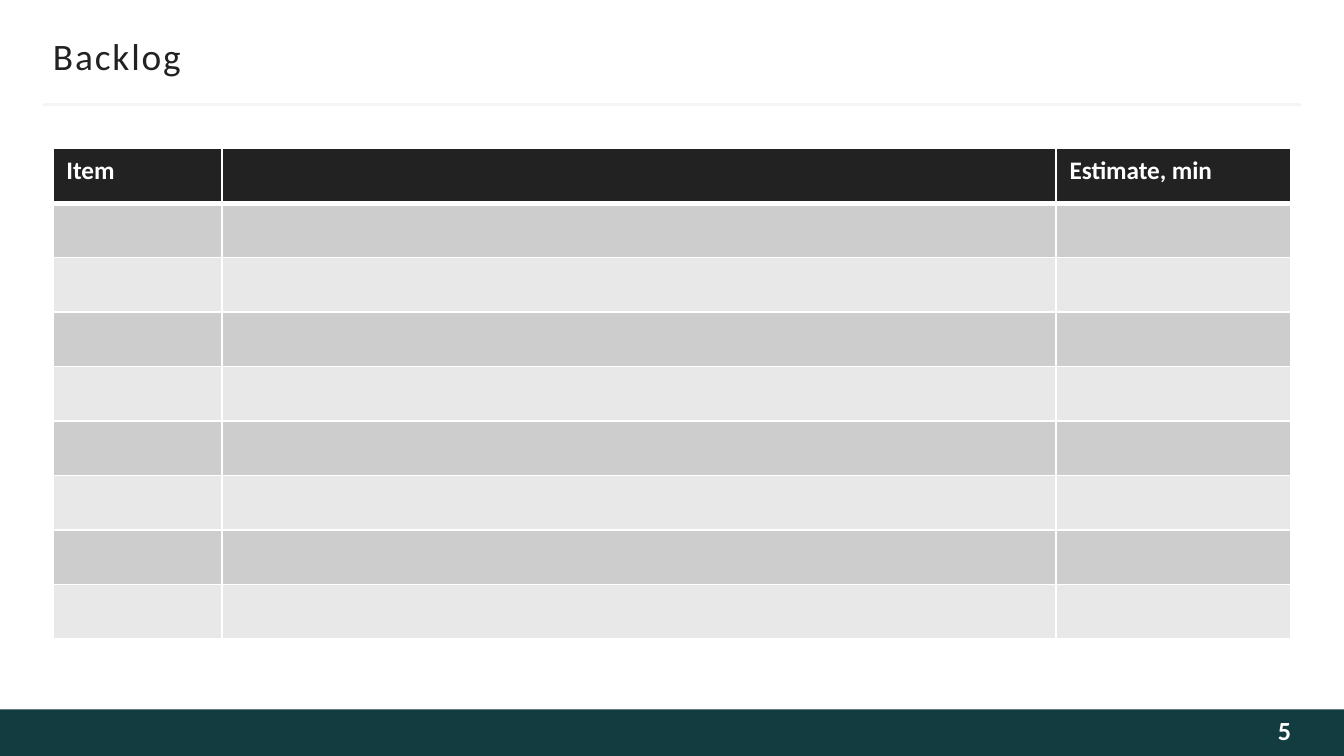
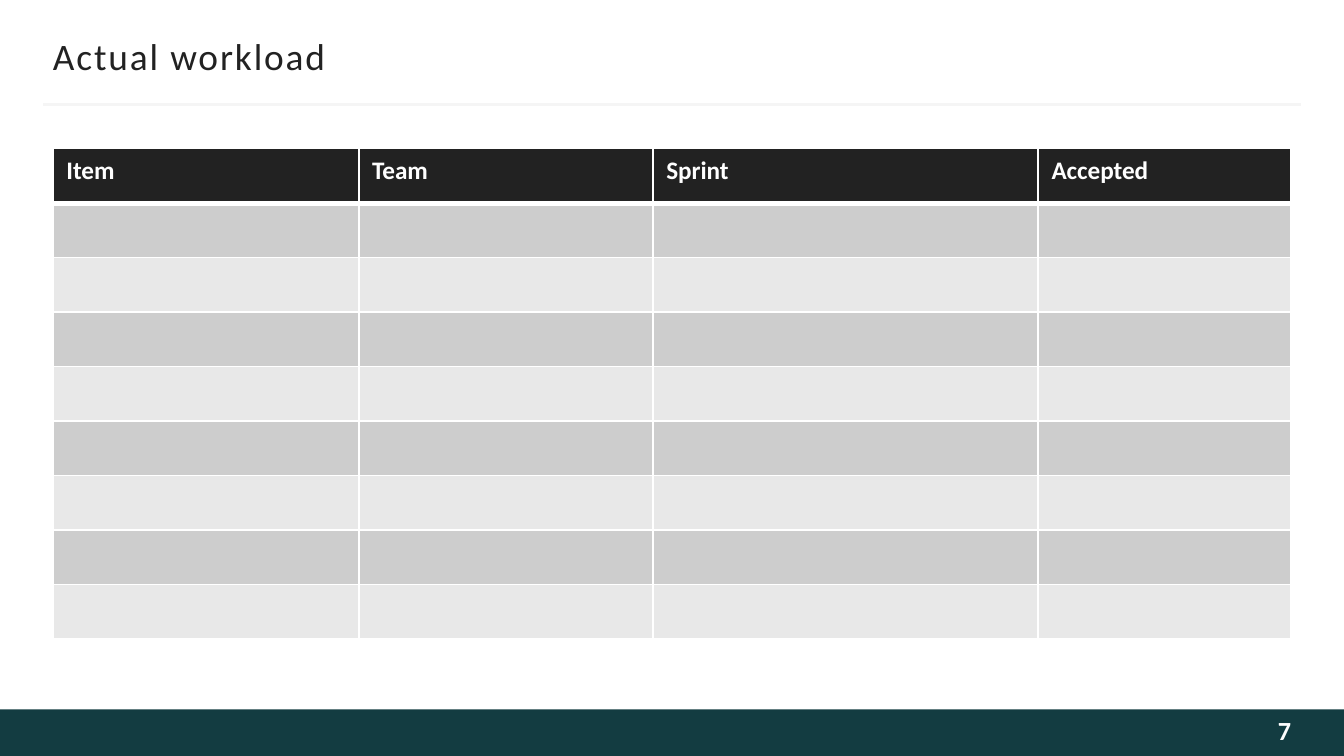
from dataclasses import dataclass
from typing import Any

from lxml.etree import SubElement
from pptx import Presentation
from pptx.dml.color import RGBColor as Color
from pptx.enum.shapes import MSO_CONNECTOR as Connector, MSO_SHAPE as Preset
from pptx.enum.text import MSO_ANCHOR as Anchor, PP_ALIGN as Align
from pptx.oxml.ns import qn
from pptx.util import Cm, Pt


@dataclass(frozen=True)
class Theme:
    font: str = "Calibri"
    background: str = "FFFFFF"
    band: str = "133C41"
    rule: str = "F5F5F5"
    dark: str = "222222"
    header_text: str = "FFFFFF"
    number_text: str = "FEFEFE"
    border: str = "FFFFFF"
    rows: tuple[str, str] = ("CDCDCD", "E8E8E8")
    title_size: float = 20
    header_size: float = 13.5
    number_size: float = 14
    rule_width: float = 1.5
    thin_border: float = 1
    header_border: float = 3


@dataclass(frozen=True)
class Column:
    heading: str
    width: float


@dataclass(frozen=True)
class TableSlide:
    title: str
    number: int
    columns: tuple[Column, ...]


THEME = Theme()
SLIDE_WIDTH, SLIDE_HEIGHT = 25.4, 14.29
MARGIN = 1.0
CONTENT_WIDTH = SLIDE_WIDTH - 2 * MARGIN
BAND_HEIGHT = 0.88
BAND_TOP = SLIDE_HEIGHT - BAND_HEIGHT
RULE_MARGIN, RULE_TOP = 0.82, 1.98
TABLE_TOP, ROW_HEIGHT, BODY_ROWS = 2.81, 1.03, 8
NUMBER_WIDTH = 3.8

SLIDES = (
    TableSlide("Backlog", 5, (
        Column("Item", 3.2), Column("", 15.76), Column("Estimate, min", 4.44))),
    TableSlide("Actual workload", 7, (
        Column("Item", 5.78), Column("Team", 5.56),
        Column("Sprint", 7.28), Column("Accepted", 4.78))),
)


def apply(target: Any, values: dict[str, Any]) -> None:
    for name, value in values.items():
        setattr(target, name, value)


def write(frame: Any, text: str, size: float, color: str, bold: bool,
          align: Any = Align.LEFT) -> Any:
    """Put one formatted run in the frame and return it."""
    paragraph = frame.paragraphs[0]
    paragraph.alignment = align
    run = paragraph.add_run()
    run.text = text
    apply(run.font, {"name": THEME.font, "size": Pt(size), "bold": bold})
    run.font.color.rgb = Color.from_string(color)
    return run


def paint(fill: Any, color: str) -> None:
    fill.solid()
    fill.fore_color.rgb = Color.from_string(color)


def add_title(slide: Any, text: str) -> None:
    title = slide.shapes.title
    apply(title, {"left": Cm(MARGIN), "top": Cm(0.64),
                  "width": Cm(CONTENT_WIDTH), "height": Cm(0.84)})
    apply(title.text_frame, {
        "margin_left": 0, "margin_right": 0, "margin_top": Cm(0.13),
        "margin_bottom": Cm(0.13), "vertical_anchor": Anchor.MIDDLE,
        "word_wrap": True})
    run = write(title.text_frame, text, THEME.title_size, THEME.dark, False)
    run.font._element.set("spc", "100")


def add_frame(slide: Any) -> None:
    """Draw the bottom band and the rule below the title."""
    band = slide.shapes.add_shape(
        Preset.RECTANGLE, 0, Cm(BAND_TOP), Cm(SLIDE_WIDTH), Cm(BAND_HEIGHT))
    band.shadow.inherit = False
    paint(band.fill, THEME.band)
    band.line.fill.background()
    rule = slide.shapes.add_connector(
        Connector.STRAIGHT, Cm(RULE_MARGIN), Cm(RULE_TOP),
        Cm(SLIDE_WIDTH - RULE_MARGIN), Cm(RULE_TOP))
    rule.line.color.rgb = Color.from_string(THEME.rule)
    rule.line.width = Pt(THEME.rule_width)
    SubElement(rule._element.spPr, qn("a:effectLst"))


def add_number(slide: Any, number: int) -> None:
    box = slide.shapes.add_textbox(
        Cm(SLIDE_WIDTH - MARGIN - NUMBER_WIDTH), Cm(BAND_TOP),
        Cm(NUMBER_WIDTH), Cm(BAND_HEIGHT))
    apply(box.text_frame, {
        "margin_left": Cm(0.25), "margin_right": 0, "margin_top": Cm(0.13),
        "margin_bottom": Cm(0.23), "vertical_anchor": Anchor.MIDDLE,
        "word_wrap": True})
    write(box.text_frame, str(number), THEME.number_size, THEME.number_text,
          True, Align.RIGHT)


def set_borders(cell: Any, top: float, bottom: float) -> None:
    widths = {"lnL": THEME.thin_border, "lnR": THEME.thin_border,
              "lnT": top, "lnB": bottom}
    properties = cell._tc.get_or_add_tcPr()
    for side, width in widths.items():
        line = SubElement(properties, qn(f"a:{side}"), w=str(Pt(width)))
        fill = SubElement(line, qn("a:solidFill"))
        SubElement(fill, qn("a:srgbClr"), val=THEME.border)


def add_table(slide: Any, columns: tuple[Column, ...]) -> None:
    row_count = BODY_ROWS + 1
    table = slide.shapes.add_table(
        row_count, len(columns), Cm(MARGIN), Cm(TABLE_TOP),
        Cm(CONTENT_WIDTH), Cm(ROW_HEIGHT * row_count)).table
    for index, column in enumerate(columns):
        table.columns[index].width = Cm(column.width)
        if column.heading:
            write(table.cell(0, index).text_frame, column.heading,
                  THEME.header_size, THEME.header_text, True)
    for index, row in enumerate(table.rows):
        row.height = Cm(ROW_HEIGHT)
        top = THEME.header_border if index == 1 else THEME.thin_border
        bottom = THEME.header_border if index == 0 else THEME.thin_border
        color = THEME.rows[(index - 1) % 2] if index else THEME.dark
        for cell in row.cells:
            set_borders(cell, top, bottom)
            paint(cell.fill, color)


def add_table_slide(presentation: Any, content: TableSlide) -> None:
    slide = presentation.slides.add_slide(presentation.slide_layouts[5])
    paint(slide.background.fill, THEME.background)
    add_frame(slide)
    add_title(slide, content.title)
    add_table(slide, content.columns)
    add_number(slide, content.number)


def main() -> None:
    presentation = Presentation()
    apply(presentation, {"slide_width": Cm(SLIDE_WIDTH),
                         "slide_height": Cm(SLIDE_HEIGHT)})
    for content in SLIDES:
        add_table_slide(presentation, content)
    presentation.save("out.pptx")


if __name__ == "__main__":
    main()
